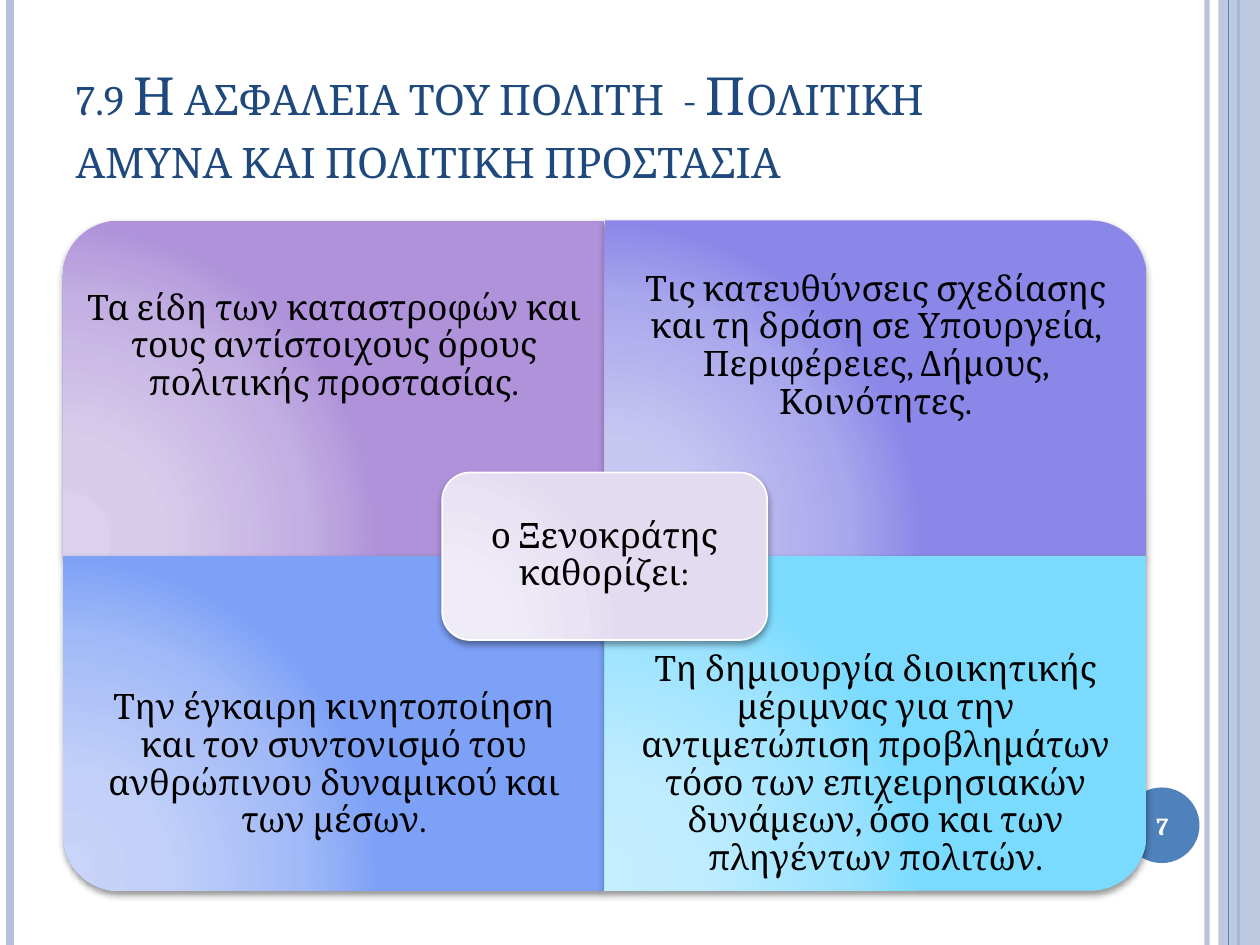
from dataclasses import dataclass

from lxml import etree
from pptx import Presentation
from pptx.dml.color import RGBColor
from pptx.enum.shapes import MSO_CONNECTOR, MSO_SHAPE
from pptx.enum.text import MSO_ANCHOR, MSO_AUTO_SIZE, PP_ALIGN
from pptx.oxml.ns import qn
from pptx.util import Inches, Pt

STRAIGHT = MSO_CONNECTOR.STRAIGHT
RECTANGLE = MSO_SHAPE.RECTANGLE
ELLIPSE = MSO_SHAPE.OVAL
ROUNDED = MSO_SHAPE.ROUNDED_RECTANGLE
ONE_CORNER = MSO_SHAPE.ROUND_1_RECTANGLE
MIDDLE, BOTTOM = MSO_ANCHOR.MIDDLE, MSO_ANCHOR.BOTTOM
LEFT, CENTER = PP_ALIGN.LEFT, PP_ALIGN.CENTER
NO_FIT = MSO_AUTO_SIZE.NONE


@dataclass(frozen=True)
class Theme:
    font: str = "Cambria"
    title: str = "1F497D"
    text: str = "000000"
    white: str = "FFFFFF"
    accent: str = "4F81BD"
    pale: str = "B3C1DB"
    title_size: int = 30
    body_size: int = 20
    number_size: int = 14


THEME = Theme()
STOPS = (0, 30, 75, 100)
MATRIX_LEFT, MATRIX_TOP = 0.5, 1.75
CELL_WIDTH, CELL_HEIGHT, TEXT_HEIGHT = 4.3, 2.66, 2

TITLE = "7.9 Η ασφαλεια του πολιτη  - Πολιτικη αμυνα και πολιτικη προστασια"
RULES = [
    (9.58, THEME.pale, 3, 93),
    (0.08, THEME.pale, 4.5, 100),
    (9.83, THEME.accent, 1.5, 100),
]
QUADRANTS = [
    (0, 0, 270, ("DBD0ED", "D8CCEB", "C3B0E2", "AF92DA"),
     "Τα είδη των καταστροφών και τους αντίστοιχους όρους πολιτικής προστασίας."),
    (0, 1, 0, ("CDCCF3", "C8C7F2", "AAA8EC", "8A87E9"),
     "Τις κατευθύνσεις σχεδίασης και τη δράση σε Υπουργεία, Περιφέρειες, "
     "Δήμους, Κοινότητες."),
    (1, 0, 180, ("C8D5F9", "C3D1F9", "A1B9F7", "7DA1F7"),
     "Την έγκαιρη κινητοποίηση και τον συντονισμό του ανθρώπινου δυναμικού "
     "και των μέσων."),
    (1, 1, 90, ("C4EEFF", "BFECFF", "9DE3FF", "7ADBFF"),
     "Τη δημιουργία διοικητικής μέριμνας για την αντιμετώπιση προβλημάτων τόσο "
     "των επιχειρησιακών δυνάμεων, όσο και των πληγέντων πολιτών."),
]
CENTER_COLORS = ("F1EEF8", "F0ECF7", "E9E3F3", "E3DBF0")
CENTER_TEXT = "ο Ξενοκράτης καθορίζει:"


def add_element(parent, tag, **values):
    element = etree.SubElement(parent, qn(tag))
    for name, value in values.items():
        element.set(name, str(value))
    return element


def apply_format(target, values):
    for name, value in values.items():
        setattr(target, name, value)


def set_alpha(fill_owner, percent):
    color = next(fill_owner.iter(qn("a:srgbClr")))
    add_element(color, "a:alpha", val=percent * 1000)


def add_rule(slide, x, color, width, opacity=100):
    rule = slide.shapes.add_connector(
        STRAIGHT, Inches(x), Inches(0), Inches(x), Inches(7.5))
    rule.line.color.rgb = RGBColor.from_string(color)
    rule.line.width = Pt(width)
    properties = rule._element.spPr
    if opacity < 100:
        set_alpha(properties, opacity)
    add_element(properties, "a:effectLst")


def add_panel(slide, kind, bounds, color):
    panel = slide.shapes.add_shape(kind, *map(Inches, bounds))
    panel.shadow.inherit = False
    panel.fill.solid()
    panel.fill.fore_color.rgb = RGBColor.from_string(color)
    panel.line.fill.background()
    return panel


def add_glow_panel(slide, kind, bounds, colors, rotation=0):
    panel = add_panel(slide, kind, bounds, colors[-1])
    panel.rotation = rotation
    properties = panel._element.spPr
    solid = properties.find(qn("a:solidFill"))
    gradient = etree.Element(qn("a:gradFill"), rotWithShape="1")
    stops = add_element(gradient, "a:gsLst")
    for position, color in zip(STOPS, colors):
        stop = add_element(stops, "a:gs", pos=position * 1000)
        add_element(stop, "a:srgbClr", val=color)
    circle = add_element(gradient, "a:path", path="circle")
    add_element(circle, "a:fillToRect", l=5000, t=100000, r=120000, b=10000)
    properties.replace(solid, gradient)
    effects = properties.find(qn("a:effectLst"))
    shadow = add_element(effects, "a:outerShdw", blurRad=Pt(4), dist=Pt(2),
                         dir=5400000, rotWithShape=0)
    add_element(shadow, "a:srgbClr", val="000000")
    set_alpha(shadow, 40)
    return panel


def write_text(shape, text, size, color, anchor=MIDDLE, align=CENTER,
               inset=0.1, spacing=1.0, bold=False):
    frame = shape.text_frame
    margin = Inches(inset)
    apply_format(frame, {
        "word_wrap": True, "auto_size": NO_FIT, "vertical_anchor": anchor,
        "margin_left": margin, "margin_right": margin,
        "margin_top": min(margin, Inches(0.16)),
        "margin_bottom": min(margin, Inches(0.16)),
    })
    para = frame.paragraphs[0]
    apply_format(para, {"alignment": align, "line_spacing": spacing})
    span = para.add_run()
    span.text = text
    apply_format(span.font, {"name": THEME.font, "size": Pt(size), "bold": bold})
    span.font.color.rgb = RGBColor.from_string(color)
    return span


def add_text(slide, bounds, text, size, color, **options):
    box = slide.shapes.add_textbox(*map(Inches, bounds))
    write_text(box, text, size, color, **options)


def add_title(slide):
    title = slide.shapes.title
    apply_format(title, {"left": Inches(0.5), "top": Inches(0.3),
                         "width": Inches(8.17), "height": Inches(1.25)})
    span = write_text(title, TITLE, THEME.title_size, THEME.title,
                      anchor=BOTTOM, align=LEFT)
    title.text_frame.margin_top = title.text_frame.margin_bottom = Inches(0.05)
    span.font._element.set("cap", "small")


def add_frame(slide):
    for rule in RULES:
        add_rule(slide, *rule)
    band = add_panel(slide, RECTANGLE, (9.67, 0, 0.33, 7.5), THEME.pale)
    set_alpha(band._element.spPr, 87)
    add_rule(slide, 9.75, THEME.accent, 0.75)
    add_panel(slide, ELLIPSE, (8.92, 6.25, 0.6, 0.6), THEME.accent)


def add_quadrant(slide, row, column, rotation, colors, text):
    left = MATRIX_LEFT + column * CELL_WIDTH
    top = MATRIX_TOP + row * CELL_HEIGHT
    width, height = CELL_WIDTH, CELL_HEIGHT
    text_top = top + row * (CELL_HEIGHT - TEXT_HEIGHT)
    bounds = (left, top, width, height)
    if rotation % 180:
        shift = (width - height) / 2
        bounds = (left + shift, top - shift, height, width)
    add_glow_panel(slide, ONE_CORNER, bounds, colors, rotation)
    add_text(slide, (left, text_top, width, TEXT_HEIGHT), text,
             THEME.body_size, THEME.text, inset=0.16, spacing=0.9)


def add_center(slide):
    panel = add_glow_panel(slide, ROUNDED, (3.51, 3.75, 2.58, 1.33), CENTER_COLORS)
    panel.line.color.rgb = RGBColor.from_string(THEME.white)
    panel.line.width = Pt(1)
    add_text(slide, (3.57, 3.81, 2.45, 1.2), CENTER_TEXT,
             THEME.body_size, THEME.text, inset=0.08, spacing=0.9)


def main():
    deck = Presentation()
    deck.slide_width, deck.slide_height = Inches(10), Inches(7.5)
    page = deck.slides.add_slide(deck.slide_layouts[5])
    add_frame(page)
    for quadrant in QUADRANTS:
        add_quadrant(page, *quadrant)
    add_center(page)
    add_text(page, (8.89, 6.27, 0.67, 0.57), "7", THEME.number_size,
             THEME.white, bold=True)
    add_title(page)
    deck.save("out.pptx")


if __name__ == "__main__":
    main()
